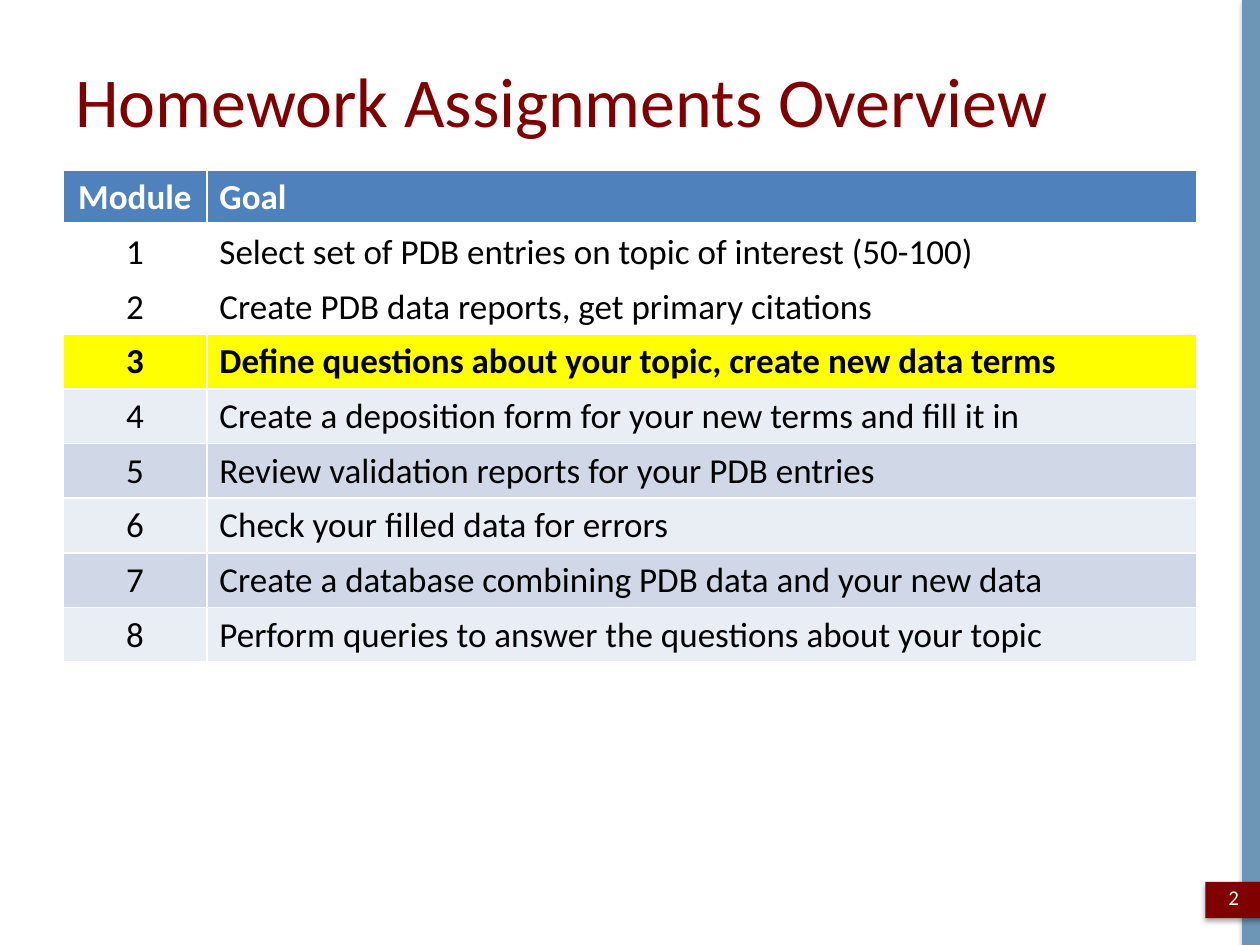
from lxml.etree import SubElement as Sub
from pptx import Presentation
from pptx.dml.color import RGBColor
from pptx.enum.shapes import MSO_SHAPE as Shape
from pptx.enum.text import MSO_ANCHOR as Anchor, PP_ALIGN as Align
from pptx.oxml.ns import qn
from pptx.util import Cm, Pt

WHITE = RGBColor(0xFF, 0xFF, 0xFF)
BLACK = RGBColor(0, 0, 0)
MAROON = RGBColor(0x80, 0, 0)
STEEL = RGBColor(0x6C, 0x95, 0xB6)
BLUE = RGBColor(0x4F, 0x81, 0xBD)
YELLOW = RGBColor(0xFF, 0xFF, 0)
PALE = RGBColor(0xE9, 0xED, 0xF4)
BAND = RGBColor(0xD0, 0xD8, 0xE8)

GOALS = [
    "Select set of PDB entries on topic of interest (50-100)",
    "Create PDB data reports, get primary citations",
    "Define questions about your topic, create new data terms",
    "Create a deposition form for your new terms and fill it in",
    "Review validation reports for your PDB entries",
    "Check your filled data for errors",
    "Create a database combining PDB data and your new data",
    "Perform queries to answer the questions about your topic",
]
DONE = 2
CURRENT = 3


def write(frame, text, size=20, color=BLACK, bold=False, align=Align.LEFT):
    """Put one formatted paragraph in a text frame."""
    para = frame.paragraphs[0]
    para.alignment = align
    run = para.add_run()
    run.text = text
    font = run.font
    font.name, font.size, font.bold = "Calibri", Pt(size), bold
    font.color.rgb = color


def add_text(slide, box, text, **style):
    """Add a wrapped text box centred vertically."""
    frame = slide.shapes.add_textbox(*map(Cm, box)).text_frame
    frame.word_wrap = True
    frame.vertical_anchor = Anchor.MIDDLE
    write(frame, text, **style)


def add_block(slide, box, color):
    """Add a plain rectangle with a soft shadow below it."""
    block = slide.shapes.add_shape(Shape.RECTANGLE, *map(Cm, box))
    block.fill.solid()
    block.fill.fore_color.rgb = color
    block.line.fill.background()
    block.shadow.inherit = False
    effects = block._element.spPr.find(qn("a:effectLst"))
    shade = Sub(effects, qn("a:outerShdw"), blurRad=str(Pt(3.1)),
                dist=str(Pt(1.8)), dir="5400000", rotWithShape="0")
    tint = Sub(shade, qn("a:srgbClr"), val=str(BLACK))
    Sub(tint, qn("a:alpha"), val="35000")


def add_edges(cell, base):
    """Draw white cell borders with the given bottom width."""
    props = cell._tc.get_or_add_tcPr()
    for side, width in zip("LRTB", (1, 1, 1, base)):
        line = Sub(props, qn(f"a:ln{side}"), w=str(Pt(width)))
        fill = Sub(line, qn("a:solidFill"))
        Sub(fill, qn("a:srgbClr"), val=str(WHITE))


def row_fill(row):
    """Return the fill colour of a table row, or None."""
    if row == 0:
        return BLUE
    if row <= DONE:
        return None
    if row == CURRENT:
        return YELLOW
    return BAND if row % 2 else PALE


def add_goals(slide, box):
    """Add the table of modules and goals."""
    left, top, width, height = box
    rows = [("Module", "Goal")]
    rows += [(str(num), goal) for num, goal in enumerate(GOALS, 1)]
    table = slide.shapes.add_table(len(rows), 2, *map(Cm, box)).table
    first = 2.9
    table.columns[0].width = Cm(first)
    table.columns[1].width = Cm(width - first)
    for row, texts in enumerate(rows):
        table.rows[row].height = Cm(height / len(rows))
        color = row_fill(row)
        for col, text in enumerate(texts):
            cell = table.cell(row, col)
            add_edges(cell, 1 if row else 3)
            if color is None:
                cell.fill.background()
            else:
                cell.fill.solid()
                cell.fill.fore_color.rgb = color
            write(cell.text_frame, text, color=BLACK if row else WHITE,
                  bold=row in (0, CURRENT),
                  align=Align.LEFT if col else Align.CENTER)


def add_trim(slide, box):
    """Add the side bar and the page number tag."""
    left, top, width, height = box
    add_block(slide, box, STEEL)
    tag = left - 0.74
    add_block(slide, (tag, top + 17.78, 1.22, 0.73), MAROON)
    add_text(slide, (tag, top + 17.58, 1.14, 1.02), "2", size=12,
             color=WHITE, align=Align.CENTER)


def main():
    """Build and save the slide."""
    deck = Presentation()
    deck.slide_width, deck.slide_height = Cm(25.4), Cm(19.05)
    slide = deck.slides.add_slide(deck.slide_layouts[6])
    add_trim(slide, (25.04, 0, 0.36, 19.05))
    add_text(slide, (1.27, 0.76, 22.86, 2.49),
             "Homework Assignments Overview", size=40, color=MAROON)
    add_goals(slide, (1.27, 3.43, 22.86, 9.9))
    deck.save("out.pptx")


if __name__ == "__main__":
    main()
